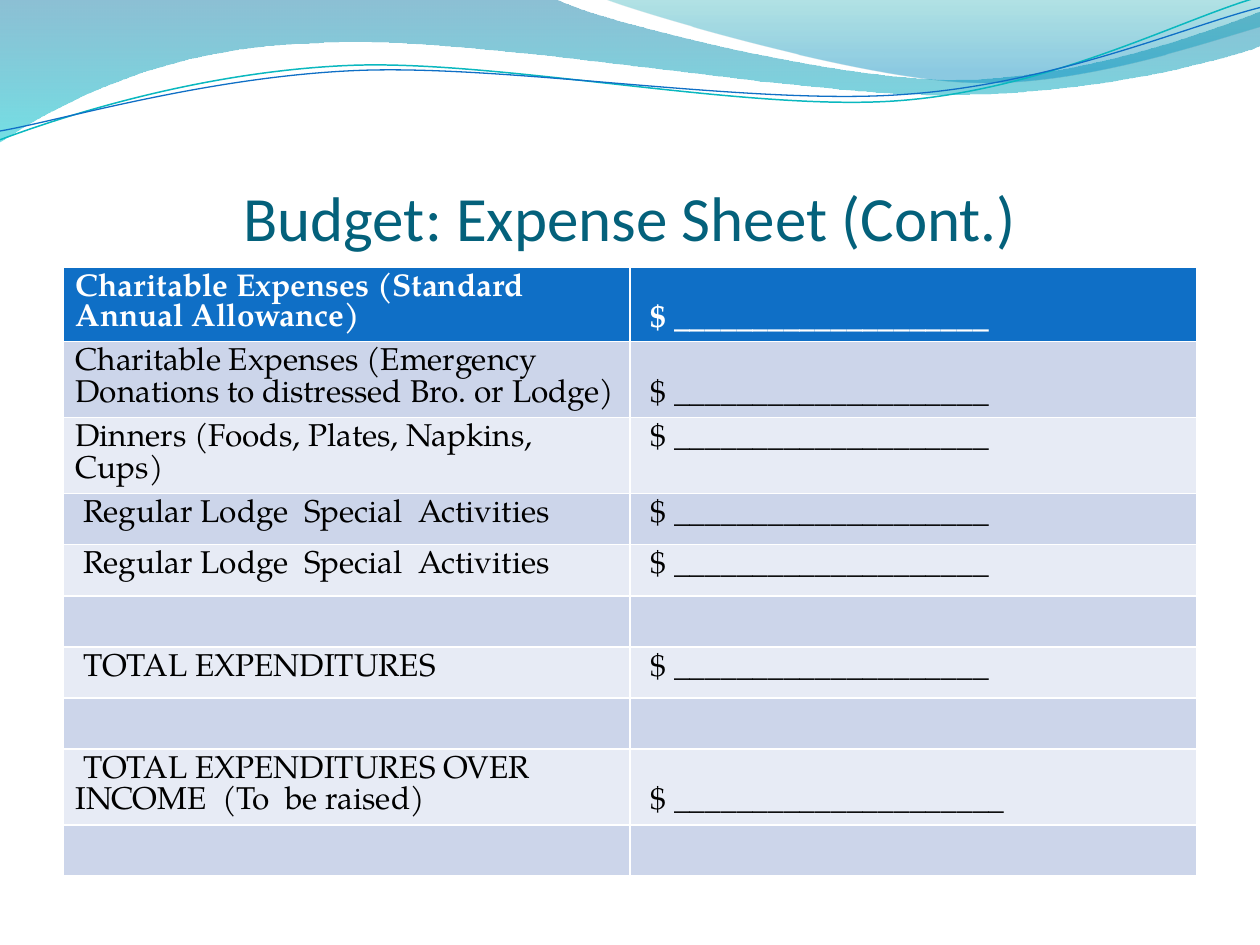
from lxml import etree
from pptx import Presentation
from pptx.dml.color import RGBColor
from pptx.enum.text import MSO_ANCHOR, PP_ALIGN
from pptx.oxml.ns import qn
from pptx.util import Inches, Pt

BOTTOM, TOP = MSO_ANCHOR.BOTTOM, MSO_ANCHOR.TOP
CENTER = PP_ALIGN.CENTER
HEX = {"title": "04617B", "head": "0F6FC6", "odd": "CCD5EA", "even": "E7EBF5",
       "white": "FFFFFF", "black": "000000", "teal": "0AB8BF"}
FONT = "TeX Gyre Pagella"
UNIT = 1000  # path units to the inch

prs = Presentation()
prs.slide_width, prs.slide_height = Inches(10), Inches(7.5)
slide = prs.slides.add_slide(prs.slide_layouts[5])
title = slide.shapes.title


def rgb(code):
    return RGBColor.from_string(code)


def curve(start, parts, closed):
    """Draw a path of points (2 numbers) and cubic curves (6 numbers)."""
    pts = [(round(p[i] * UNIT), round(p[i + 1] * UNIT))
           for p in [start] + parts for i in range(0, len(p), 2)]
    pen = slide.shapes.build_freeform(*pts[0], scale=Inches(1) / UNIT)
    pen.add_line_segments(pts[1:], close=closed)
    shape = pen.convert_to_shape()
    shape.shadow.inherit = False
    # Merge each run of three segments into one cubic curve
    segs = iter(list(shape._element.iter(qn("a:lnTo"))))
    for part in parts:
        first = next(segs)
        if len(part) == 6:
            first.tag = qn("a:cubicBezTo")
            for seg in (next(segs), next(segs)):
                first.append(seg[0])
                seg.getparent().remove(seg)
    return shape


# Shaded waves: start, parts, gradient stops (place, colour, opacity)
waves = [
    ((0, 0), [(4.4, -0.01), (4.76, 0.17, 6.64, 0.63, 7.58, 0.63),
              (8.53, 0.63, 9.58, 0.26, 10, 0.09), (10.01, 0.36),
              (9.83, 0.44, 8.7, 0.76, 7.46, 0.75),
              (6.22, 0.75, 3.82, 0.28, 2.57, 0.34),
              (1.29, 0.36, 0.46, 0.83, -0.01, 1.13)],
     [(0, "0074A1", 45), (1, "00C6CF", 55)]),
    ((4.79, -0.01), [(5.09, 0.11, 6.82, 0.62, 7.69, 0.65),
                     (8.56, 0.69, 9.61, 0.32, 10, 0.21), (10, 0)],
     [(0, "00A1A9", 30), (0.8, "008BBF", 45)]),
]
for start, parts, stops in waves:
    wave = curve(start, parts, True)
    wave.line.fill.background()
    wave.fill.gradient()
    wave.fill.gradient_angle = 270
    for stop, (place, code, alpha) in zip(wave.fill.gradient_stops, stops):
        stop.position = place
        stop.color.rgb = rgb(code)
    marks = wave._element.spPr.iter(qn("a:srgbClr"))
    for mark, (place, code, alpha) in zip(marks, stops):
        etree.SubElement(mark, qn("a:alpha"), val=str(alpha * 1000))

# Thin wave lines
lines = [
    ((0, 1.11), [(0.48, 0.93, 1.58, 0.57, 2.77, 0.52),
                 (3.95, 0.47, 5.93, 0.89, 7.13, 0.8),
                 (8.33, 0.71, 9.38, 0.15, 9.98, -0.02)], "teal", 0.85),
    ((0, 1.04), [(0.47, 0.96, 1.64, 0.61, 2.83, 0.56),
                 (4.03, 0.51, 5.97, 0.84, 7.17, 0.75),
                 (8.36, 0.67, 9.41, 0.21, 10, 0.06)], "head", 0.75),
]
for start, parts, name, width in lines:
    line = curve(start, parts, False)
    line.fill.background()
    line.line.color.rgb = rgb(HEX[name])
    line.line.width = Pt(width)

# Title
title.left, title.top = Inches(0.5), Inches(0.77)
title.width, title.height = Inches(9), Inches(1.25)
frame = title.text_frame
frame.text = "Budget: Expense Sheet (Cont.)"
frame.vertical_anchor = BOTTOM
frame.margin_left = frame.margin_right = frame.margin_bottom = 0
frame.margin_top = Inches(0.05)
frame.paragraphs[0].alignment = CENTER
font = frame.paragraphs[0].runs[0].font
font.name, font.size, font.color.rgb = "Calibri", Pt(36), rgb(HEX["title"])

# Expense table: label, blank length, amount on the second line
rows = [
    ("Charitable Expenses (Standard Annual Allowance)", 20, True),
    ("Charitable Expenses (Emergency Donations to distressed Bro. or Lodge)", 20, True),
    ("Dinners (Foods, Plates, Napkins, Cups)", 20, False),
    (" Regular Lodge  Special  Activities", 20, False),
    (" Regular Lodge  Special  Activities", 20, False),
    ("", 0, False),
    (" TOTAL EXPENDITURES", 20, False),
    ("", 0, False),
    (" TOTAL EXPENDITURES OVER INCOME  (To  be raised)", 21, True),
    ("", 0, False),
]
high = Pt(29.2)  # rows with two lines grow
table = slide.shapes.add_table(len(rows), 2, Inches(0.5), Inches(2.12),
                               Inches(9), high * len(rows)).table
for r, (label, count, low) in enumerate(rows):
    table.rows[r].height = high
    back = "head" if r == 0 else "odd" if r % 2 else "even"
    amount = " $ " + "_" * count if count else ""
    for c, text in enumerate((label, amount)):
        cell = table.cell(r, c)
        cell.fill.solid()
        cell.fill.fore_color.rgb = rgb(HEX[back])
        cell.vertical_anchor = BOTTOM if c and low else TOP
        if not text:
            continue
        cell.text_frame.text = text
        font = cell.text_frame.paragraphs[0].runs[0].font
        font.name, font.size, font.bold = FONT, Pt(18), r == 0
        font.color.rgb = rgb(HEX["black" if r else "white"])

prs.save("out.pptx")
